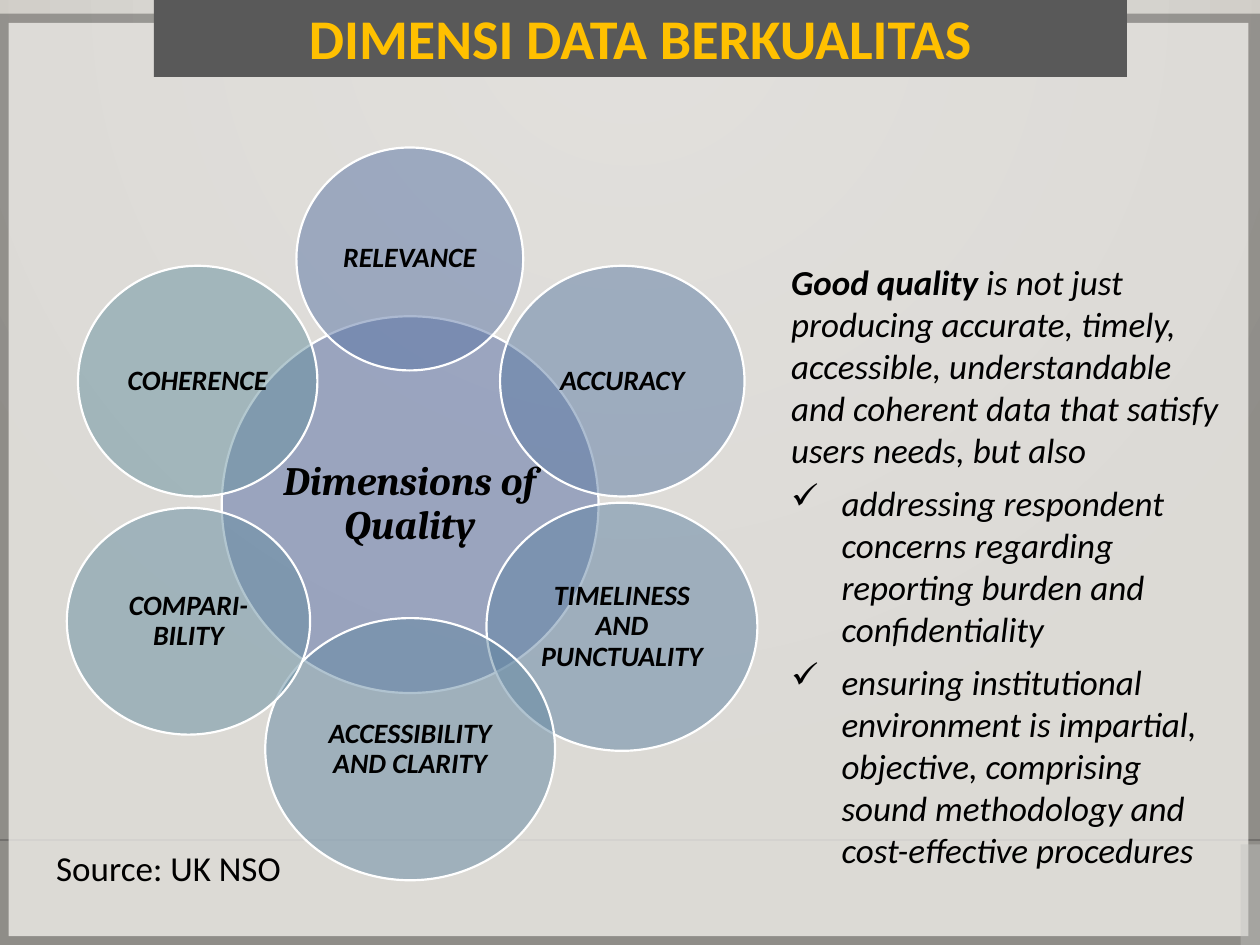
from pptx import Presentation
from pptx.dml.color import RGBColor
from pptx.enum.shapes import MSO_CONNECTOR as CONN, MSO_SHAPE as SHAPE
from pptx.enum.text import MSO_ANCHOR as ANCHOR, MSO_AUTO_SIZE as AUTO, PP_ALIGN as ALIGN
from pptx.oxml import parse_xml
from pptx.oxml.ns import nsdecls, qn
from pptx.util import Pt

BLACK = RGBColor(0x00, 0x00, 0x00)
WHITE = RGBColor(0xFF, 0xFF, 0xFF)
GOLD = RGBColor(0xFF, 0xC0, 0x00)
CHARCOAL = RGBColor(0x59, 0x59, 0x59)
PANEL = RGBColor(0xF6, 0xF4, 0xF0)
EDGE = RGBColor(0xC3, 0xC3, 0xC1)
BG_LIGHT = RGBColor(0xEC, 0xEA, 0xE7)
BG_DARK = RGBColor(0xCA, 0xC7, 0xC1)

# label, left, top, width, height, colour
DIMENSIONS = [
    ("RELEVANCE", 169.4, 84.3, 129.6, 127.4, RGBColor(0x5A, 0x75, 0xA5)),
    ("ACCURACY", 285.8, 151.9, 139.7, 131.8, RGBColor(0x5D, 0x7C, 0xA4)),
    ("TIMELINESS AND PUNCTUALITY", 278, 287.3, 154.8, 141.8, RGBColor(0x60, 0x83, 0xA3)),
    ("ACCESSIBILITY AND CLARITY", 151.6, 353.2, 165.6, 149.8, RGBColor(0x63, 0x88, 0xA2)),
    ("COMPARI-BILITY", 38.2, 290.2, 139, 129.6, RGBColor(0x65, 0x8D, 0xA1)),
    ("COHERENCE", 44.6, 151.9, 136.8, 131.8, RGBColor(0x68, 0x92, 0xA0)),
]
INTRO = ("is not just producing accurate, timely, accessible, understandable "
         "and coherent data that satisfy users needs, but also")
CHECKS = [
    "addressing respondent concerns regarding reporting burden and confidentiality",
    "ensuring institutional environment is impartial, objective, comprising "
    "sound methodology and cost-effective procedures",
]


def a_xml(tag, body="", attrs=""):
    return parse_xml(f"<a:{tag} {nsdecls('a')} {attrs}>{body}</a:{tag}>")


def set_alpha(fill_owner, percent):
    color = next(fill_owner.iter(qn("a:srgbClr")))
    color.append(a_xml("alpha", attrs=f'val="{percent * 1000}"'))


def add_run(p, text, *, size=20, font="Calibri", color=BLACK, bold=False, italic=False):
    r = p.add_run()
    r.text = text
    f = r.font
    f.size, f.name, f.bold, f.italic = Pt(size), font, bold, italic
    f.color.rgb = color


def add_filled(s, kind, left, top, width, height, color, alpha):
    sp = s.shapes.add_shape(kind, Pt(left), Pt(top), Pt(width), Pt(height))
    sp.shadow.inherit = False
    sp.fill.solid()
    sp.fill.fore_color.rgb = color
    set_alpha(sp.element.spPr, alpha)
    sp.line.fill.background()
    return sp


def add_circle(s, label, left, top, width, height, color, inset=1.5, **fmt):
    sp = add_filled(s, SHAPE.OVAL, left, top, width, height, color, 50)
    sp.line.color.rgb = WHITE
    sp.line.width = Pt(1.25)
    tf = sp.text_frame
    tf.word_wrap = True
    tf.vertical_anchor = ANCHOR.MIDDLE
    tf.margin_left = tf.margin_right = tf.margin_top = tf.margin_bottom = Pt(inset)
    p = tf.paragraphs[0]
    p.alignment = ALIGN.CENTER
    p.line_spacing = 0.9
    add_run(p, label, bold=True, italic=True, **fmt)


def add_text_box(s, left, top, width, height, wrap=True):
    tf = s.shapes.add_textbox(Pt(left), Pt(top), Pt(width), Pt(height)).text_frame
    tf.word_wrap = wrap
    tf.auto_size = AUTO.SHAPE_TO_FIT_TEXT
    return tf


def set_background(s):
    """Radial gradient centred on the top edge."""
    fill = s.background.fill
    fill.gradient()
    for stop, color, pos in zip(fill.gradient_stops, (BG_LIGHT, BG_DARK), (0, 1)):
        stop.color.rgb = color
        stop.position = pos
    grad = next(s.element.iter(qn("a:gradFill")))
    grad.replace(grad.find(qn("a:lin")), a_xml(
        "path", '<a:fillToRect l="43000" r="43000" b="100000"/>', 'path="circle"'))


def add_backdrop(s):
    line = s.shapes.add_connector(CONN.STRAIGHT, Pt(0), Pt(480), Pt(720), Pt(480))
    line.line.color.rgb = BLACK
    line.line.width = Pt(1)
    set_alpha(line.element.spPr, 20)
    line.element.spPr.append(a_xml("effectLst"))

    panel = add_filled(s, SHAPE.RECTANGLE, 5, 13, 708.5, 522, PANEL, 75)
    panel.element.spPr.find(qn("a:effectLst")).append(a_xml(
        "outerShdw", '<a:srgbClr val="000000"><a:alpha val="39000"/></a:srgbClr>',
        'sx="102000" sy="102000" algn="ctr" rotWithShape="0"'))
    add_filled(s, SHAPE.RECTANGLE, 709, 482.5, 11.5, 60.5, EDGE, 43)


def add_title(s, text):
    title = s.shapes.title
    # Bring the title in front of the backdrop.
    title.element.getparent().append(title.element)
    title.left, title.top, title.width, title.height = Pt(88), Pt(-2), Pt(556), Pt(46)
    title.fill.solid()
    title.fill.fore_color.rgb = CHARCOAL
    tf = title.text_frame
    tf.auto_size = AUTO.NONE
    tf.vertical_anchor = ANCHOR.MIDDLE
    p = tf.paragraphs[0]
    p.alignment = ALIGN.CENTER
    add_run(p, text, size=32, color=GOLD, bold=True)


def add_explanation(s):
    tf = add_text_box(s, 445, 145.5, 260.5, 358.5)
    p = tf.paragraphs[0]
    p.space_after = Pt(6)
    add_run(p, "Good quality ", bold=True, italic=True)
    add_run(p, INTRO, italic=True)
    for check in CHECKS:
        p = tf.add_paragraph()
        p.space_after = Pt(6)
        ppr = p._p.get_or_add_pPr()
        ppr.set("marL", str(Pt(28.8)))
        ppr.set("indent", str(-Pt(28.8)))
        ppr.append(a_xml("buChar", attrs='char="✓"'))
        add_run(p, check, italic=True)


def main():
    prs = Presentation()
    prs.slide_width, prs.slide_height = Pt(720), Pt(540)
    s = prs.slides.add_slide(prs.slide_layouts[5])
    set_background(s)
    add_backdrop(s)
    add_title(s, "DIMENSI DATA BERKUALITAS")
    source = add_text_box(s, 25, 480, 150, 31.5, wrap=False)
    add_run(source.paragraphs[0], "Source: UK NSO")
    add_explanation(s)
    add_circle(s, "Dimensions of Quality", 126.7, 180.7, 215.3, 215.3,
               RGBColor(0x58, 0x6E, 0xA6), inset=2, size=23, font="Cambria")
    for dimension in DIMENSIONS:
        add_circle(s, *dimension, size=16)
    prs.save("out.pptx")


if __name__ == "__main__":
    main()
